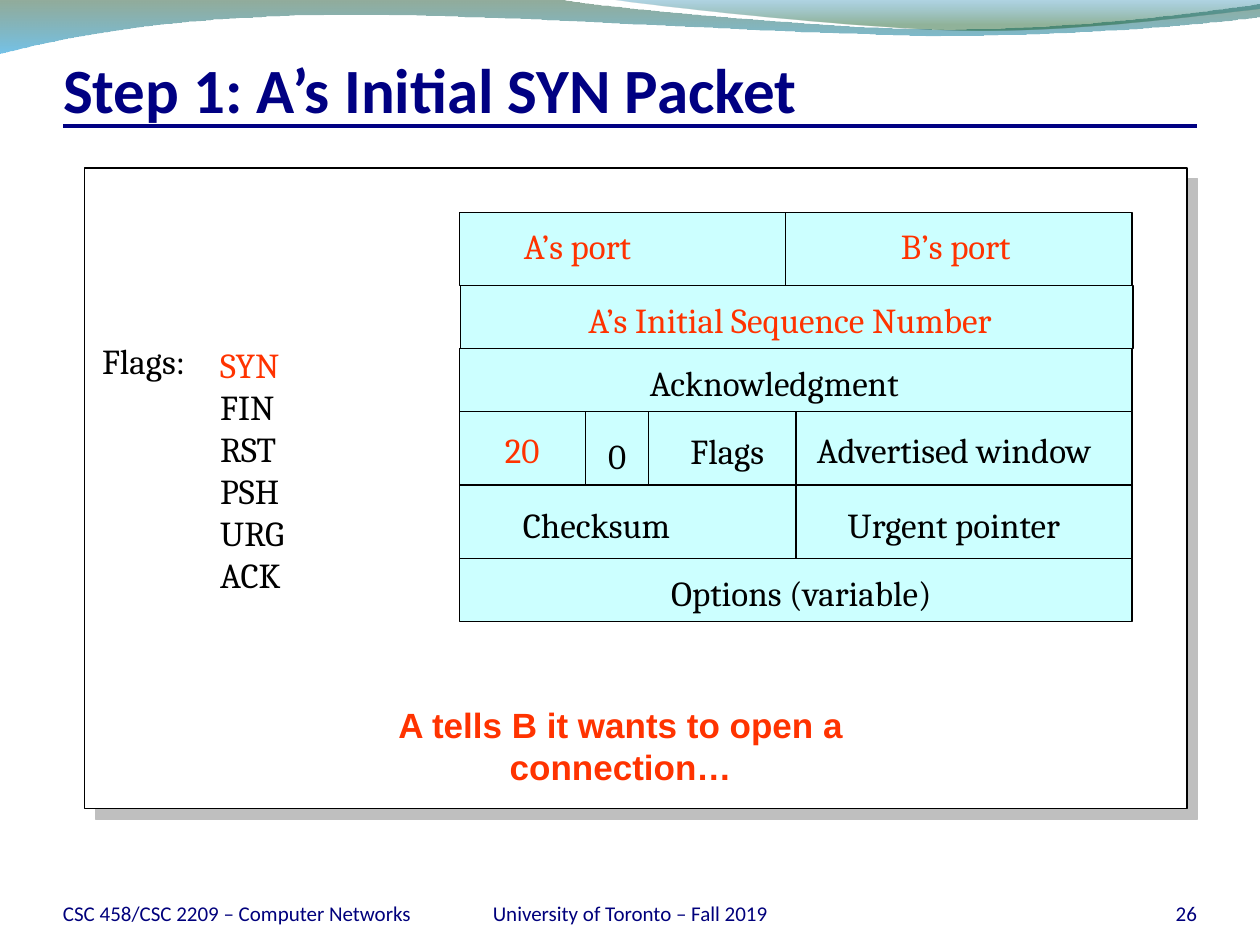
from dataclasses import dataclass

from lxml.etree import SubElement
from pptx import Presentation
from pptx.dml.color import RGBColor as RGB
from pptx.enum.shapes import MSO_CONNECTOR as CONN, MSO_SHAPE as SHAPE
from pptx.enum.text import MSO_ANCHOR as ANCHOR, MSO_AUTO_SIZE as FIT, PP_ALIGN as ALIGN
from pptx.oxml import parse_xml
from pptx.oxml.ns import nsdecls, qn
from pptx.util import Cm, Pt


@dataclass(frozen=True)
class Theme:
    navy: str = "000082"
    footer: str = "00007C"
    ink: str = "000000"
    accent: str = "FF3300"
    cell: str = "CCFFFF"
    panel: str = "FFFFFF"
    shadow: str = "BFBFBF"
    title_font: str = "Calibri"
    body_font: str = "Cambria"
    note_font: str = "Arial"
    title_size: int = 36
    body_size: int = 20
    footer_size: int = 12


T = Theme()


@dataclass(frozen=True)
class Label:
    text: str
    left: float
    top: float
    width: float
    color: str = T.ink
    height: float = 1.09
    font: str = T.body_font
    size: int = T.body_size
    bold: bool = False
    align: ALIGN = ALIGN.LEFT
    anchor: ANCHOR = ANCHOR.TOP
    inset: tuple[float, float] = (0.25, 0.13)


@dataclass(frozen=True)
class Wave:
    """Segments hold one point for a line and three for a Bézier curve."""
    start: tuple
    segments: tuple
    stops: tuple  # (position %, colour, opacity %)


@dataclass(frozen=True)
class Row:
    height: float
    labels: tuple[Label, ...]
    splits: tuple = ()
    dividers: tuple = ()
    shift: float = 0


WAVES = (
    Wave((0, -0.03), (
        ((11.18, -0.03),),
        ((12.09, 0.15), (16.87, 0.58), (19.25, 0.58)),
        ((21.67, 0.58), (24.33, 0.23), (25.4, 0.08)),
        ((25.43, 0.33),),
        ((24.97, 0.41), (22.1, 0.71), (18.95, 0.71)),
        ((15.8, 0.69), (9.7, 0.25), (6.53, 0.3)),
        ((3.28, 0.33), (1.17, 0.76), (-0.03, 1.07)),
        ((0, -0.03),),
    ), ((0, "0F461E", 45), (100, "0090D6", 55))),
    Wave((12.17, -0.03), (
        ((12.93, 0.1), (17.32, 0.58), (19.53, 0.61)),
        ((21.74, 0.64), (24.41, 0.28), (25.4, 0.18)),
        ((25.4, -0.03),),
        ((12.17, -0.03),),
    ), ((0, "0076AF", 30), (80, "0D5821", 45))),
)

HEADER_LEFT, HEADER_TOP, HEADER_WIDTH = 9.27, 4.28, 13.55
TALL, SHORT = 1.48, 1.27
HALF = HEADER_WIDTH / 2
ROWS = (
    Row(TALL, (Label("A’s port", 10.31, 4.39, 2.9, T.accent),
               Label("B’s port", 17.91, 4.39, 2.9, T.accent)), splits=(6.56,)),
    Row(SHORT, (Label("A’s Initial Sequence Number", 11.61, 5.89, 9.42, T.accent),), shift=0.02),
    Row(SHORT, (Label("Acknowledgment", 12.85, 7.16, 5.89),)),
    Row(TALL, (Label("Advertised window", 16.22, 8.5, 6.4),
               Label("Flags", 13.67, 8.53, 2.24),
               Label("0", 12.01, 8.63, 0.91)), splits=(HALF,), dividers=(11.81, 13.08)),
    Row(TALL, (Label("Checksum", 10.29, 10.03, 3.84),
               Label("Urgent pointer", 16.84, 10.03, 4.98)), splits=(HALF,)),
    Row(SHORT, (Label("Options (variable)", 13.28, 11.39, 6.07),)),
)
HEADER_LENGTH = Label("20", 9.93, 8.51, 2.97, T.accent)
FLAGS_HEADING = Label("Flags:", 1.81, 6.71, 2.44)
FLAGS = ("SYN", "FIN", "RST", "PSH", "URG", "ACK")
NOTE = Label("A tells B it wants to open a connection…", 5.44, 14.05, 14.15, T.accent,
             font=T.note_font, bold=True, align=ALIGN.CENTER, inset=(1.5, 0.13))
FOOTERS = (("CSC 458/CSC 2209 – Computer Networks", 1.27, 7.2, ALIGN.LEFT),
           ("26", 22.02, 2.11, ALIGN.RIGHT),
           ("University of Toronto – Fall 2019", 8.68, 8.05, ALIGN.CENTER))


def add_run(p, text: str, font: str, size: int, color: str, bold: bool = False) -> None:
    r = p.add_run()
    r.text = text
    r.font.name, r.font.size, r.font.bold = font, Pt(size), bold
    r.font.color.rgb = RGB.from_string(color)


def set_frame(tf, inset: tuple, anchor: ANCHOR) -> None:
    """Apply (horizontal, top) insets and a vertical anchor."""
    tf.word_wrap, tf.auto_size, tf.vertical_anchor = True, FIT.NONE, anchor
    tf.margin_left = tf.margin_right = Cm(inset[0])
    tf.margin_top, tf.margin_bottom = Cm(inset[1]), Cm(0)


def write_label(sp, label: Label):
    tf = sp.text_frame
    set_frame(tf, label.inset, label.anchor)
    p = tf.paragraphs[0]
    p.alignment = label.align
    add_run(p, label.text, label.font, label.size, label.color, label.bold)
    return tf


def add_label(s, label: Label):
    return write_label(s.shapes.add_textbox(
        Cm(label.left), Cm(label.top), Cm(label.width), Cm(label.height)), label)


def add_box(s, left: float, top: float, width: float, height: float, fill: str,
            outlined: bool = True):
    sp = s.shapes.add_shape(SHAPE.RECTANGLE, Cm(left), Cm(top), Cm(width), Cm(height))
    sp.shadow.inherit = False
    sp.fill.solid()
    sp.fill.fore_color.rgb = RGB.from_string(fill)
    if outlined:
        sp.line.color.rgb = RGB.from_string(T.ink)
        sp.line.width = Pt(0.75)
    else:
        sp.line.fill.background()
    return sp


def add_line(s, x1: float, y1: float, x2: float, y2: float, color: str, width: float) -> None:
    line = s.shapes.add_connector(CONN.STRAIGHT, Cm(x1), Cm(y1), Cm(x2), Cm(y2))
    line.line.color.rgb = RGB.from_string(color)
    line.line.width = Pt(width)
    SubElement(line._element.spPr, qn("a:effectLst"))


def add_wave(s, wave: Wave) -> None:
    """Draw the outline through its corner points, then bend the curved segments."""
    builder = s.shapes.build_freeform(Cm(wave.start[0]), Cm(wave.start[1]))
    builder.add_line_segments([(Cm(x), Cm(y)) for *_, (x, y) in wave.segments], close=True)
    sp = builder.convert_to_shape()
    sp.shadow.inherit = False
    sp.line.fill.background()
    spPr = sp._element.spPr
    for step, seg in zip(list(spPr.iter(qn("a:lnTo"))), wave.segments):
        if len(seg) == 3:
            step.tag = qn("a:cubicBezTo")
            step.clear()
            for x, y in seg:
                SubElement(step, qn("a:pt"), x=str(Cm(x) - sp.left), y=str(Cm(y) - sp.top))
    stops = "".join(f'<a:gs pos="{pos * 1000}"><a:srgbClr val="{color}">'
                    f'<a:alpha val="{alpha * 1000}"/></a:srgbClr></a:gs>'
                    for pos, color, alpha in wave.stops)
    spPr.find(qn("a:custGeom")).addnext(parse_xml(
        f'<a:gradFill {nsdecls("a")} rotWithShape="1"><a:gsLst>{stops}</a:gsLst>'
        '<a:lin ang="5400000" scaled="0"/></a:gradFill>'))


def add_panel(s) -> None:
    panel = add_box(s, 1.71, 3.39, 22.22, 12.91, T.panel)
    panel._element.spPr.find(qn("a:effectLst")).append(parse_xml(
        f'<a:outerShdw {nsdecls("a")} dist="{Pt(8.5)}" dir="2700000" algn="ctr" rotWithShape="0">'
        f'<a:srgbClr val="{T.shadow}"/></a:outerShdw>'))


def add_packet_header(s) -> None:
    top = HEADER_TOP
    for row in ROWS:
        edges = (0, *row.splits, HEADER_WIDTH)
        for start, end in zip(edges, edges[1:]):
            add_box(s, HEADER_LEFT + row.shift + start, top, end - start, row.height, T.cell)
        for x in row.dividers:
            add_line(s, x, top, x, top + row.height, T.ink, 0.75)
        for label in row.labels:
            write_label(add_box(s, label.left, label.top, label.width, label.height, T.cell,
                                outlined=False), label)
        top += row.height
    add_label(s, HEADER_LENGTH)


def add_title(s, text: str) -> None:
    title = s.shapes.title
    title.left, title.top, title.width, title.height = Cm(1.27), Cm(0.85), Cm(22.86), Cm(1.69)
    set_frame(title.text_frame, (0, 0.13), ANCHOR.BOTTOM)
    p = title.text_frame.paragraphs[0]
    p.alignment = ALIGN.LEFT
    add_run(p, text, T.title_font, T.title_size, T.navy, True)
    add_line(s, 1.27, 2.54, 24.13, 2.54, T.navy, 2.25)


def main() -> None:
    prs = Presentation()
    prs.slide_width, prs.slide_height = Cm(25.4), Cm(19.05)
    s = prs.slides.add_slide(prs.slide_layouts[5])
    for wave in WAVES:
        add_wave(s, wave)
    add_title(s, "Step 1: A’s Initial SYN Packet")
    for text, left, width, align in FOOTERS:
        add_label(s, Label(text, left, 17.65, width, T.footer, 1.02, T.title_font, T.footer_size,
                           align=align, anchor=ANCHOR.BOTTOM, inset=(0, 0)))
    add_panel(s)
    add_packet_header(s)
    add_label(s, FLAGS_HEADING)
    tf = add_label(s, Label(FLAGS[0], 4.19, 6.8, 2.08, T.accent, height=5.33))
    for flag in FLAGS[1:]:
        add_run(tf.add_paragraph(), flag, T.body_font, T.body_size, T.ink)
    add_label(s, NOTE)
    prs.save("out.pptx")


if __name__ == "__main__":
    main()
